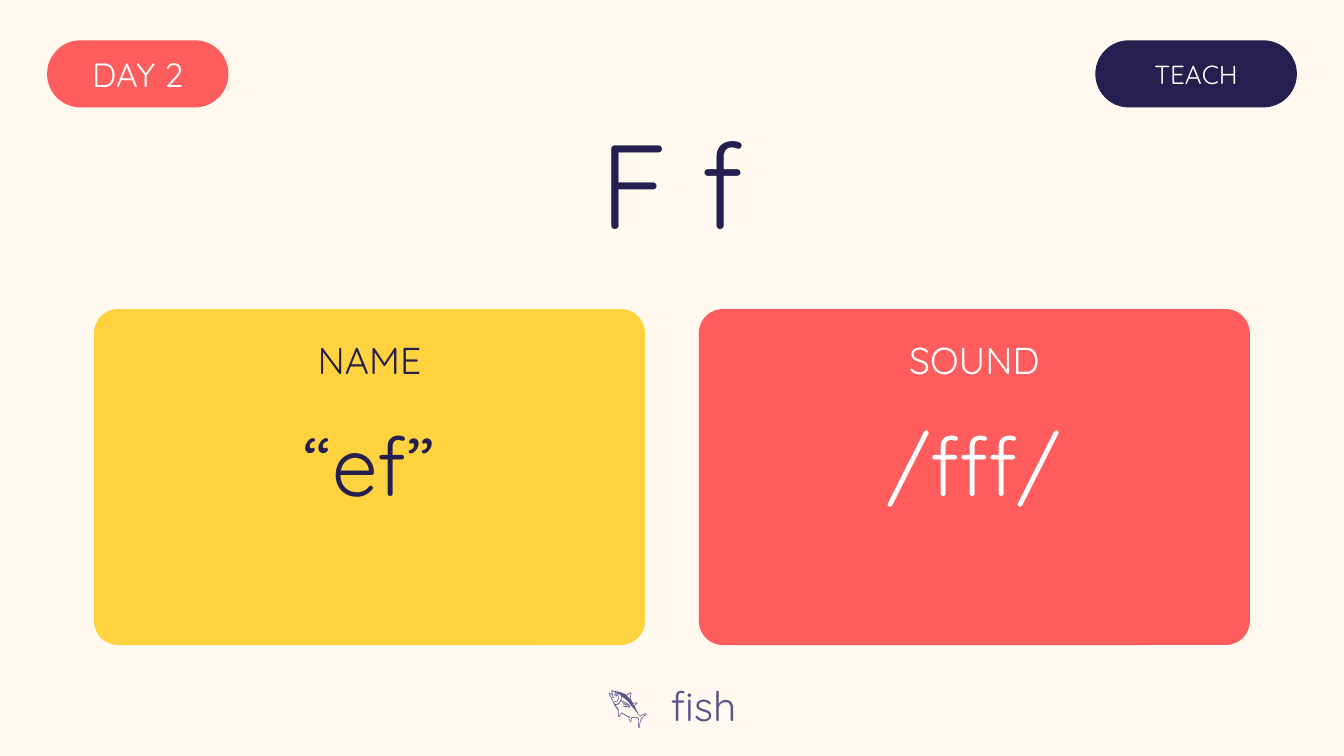
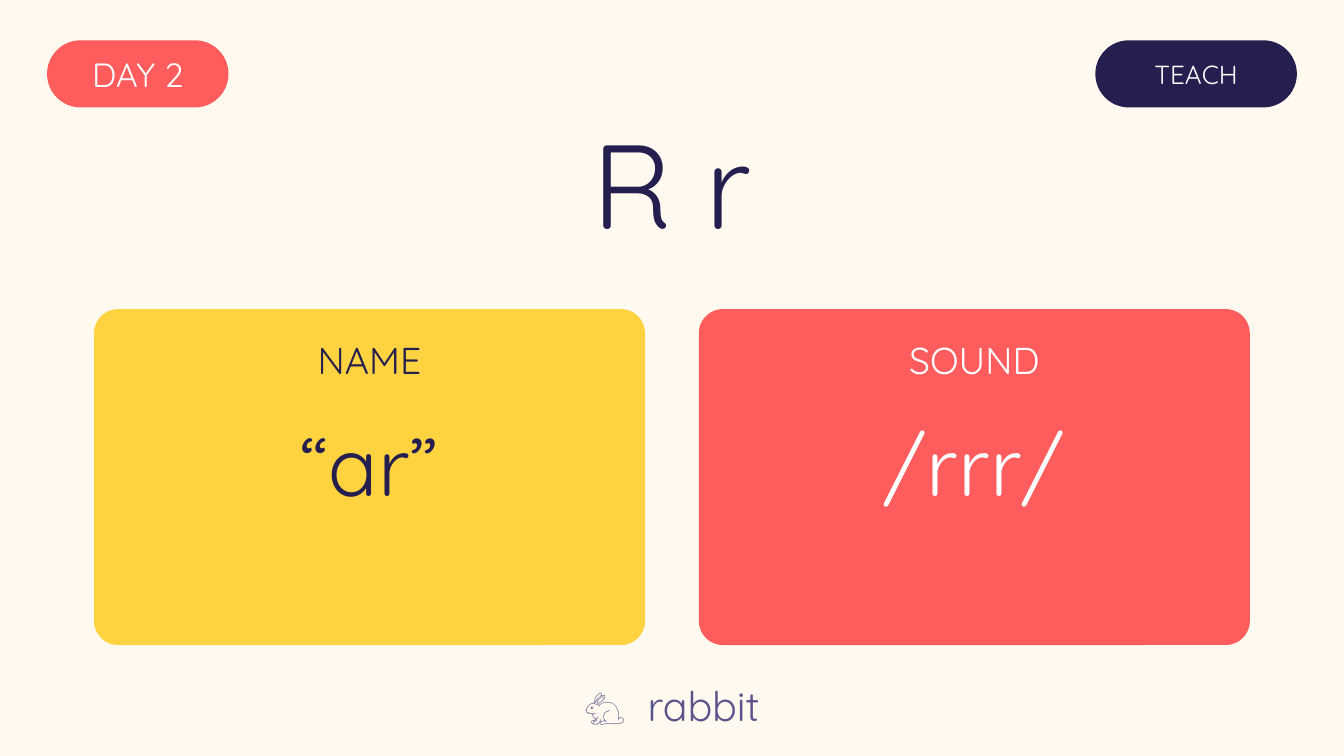
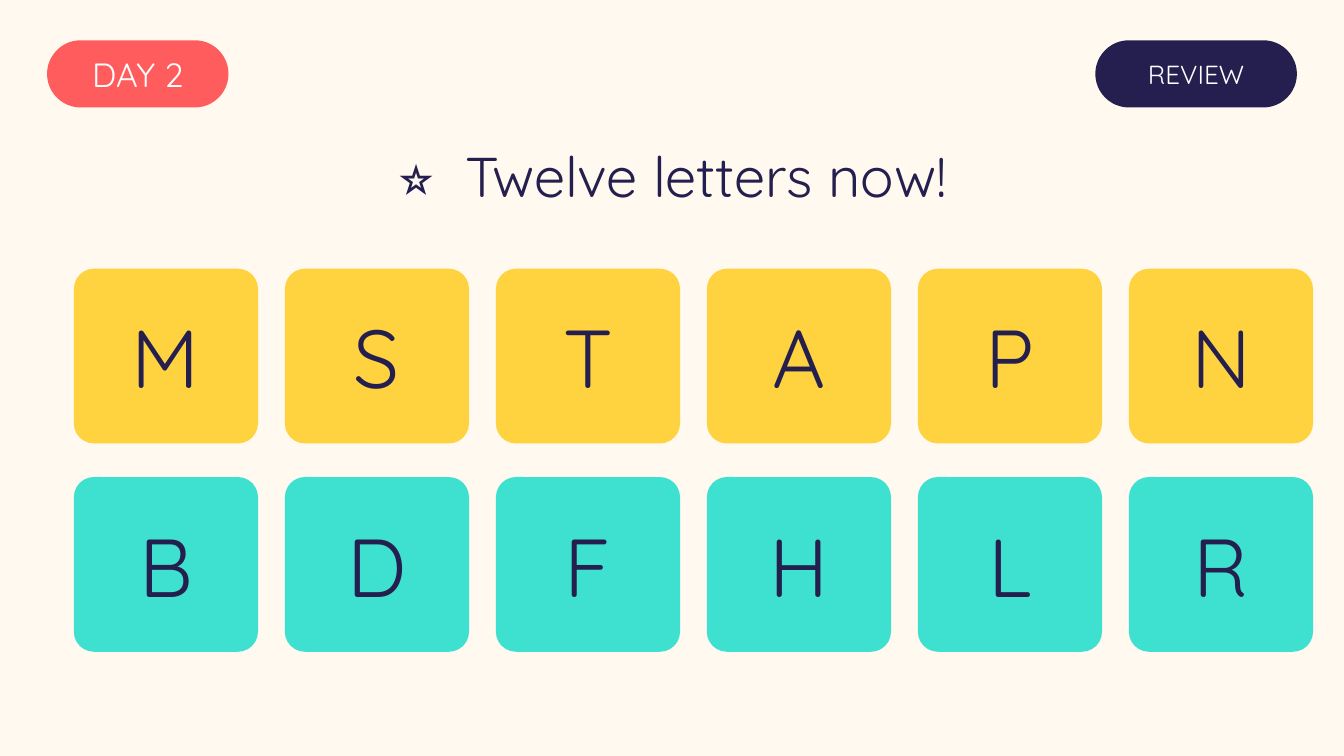
from pptx import Presentation
from pptx.dml.color import RGBColor
from pptx.enum.shapes import MSO_SHAPE
from pptx.enum.text import MSO_ANCHOR, MSO_AUTO_SIZE, PP_ALIGN
from pptx.util import Pt

ROUNDED = MSO_SHAPE.ROUNDED_RECTANGLE
MIDDLE = MSO_ANCHOR.MIDDLE
CENTER = PP_ALIGN.CENTER
NO_AUTOFIT = MSO_AUTO_SIZE.NONE

# Content
DAY = "DAY 2"
LESSONS = [
    {"title": "F f", "name": "“ef”", "sound": "/fff/", "word": "🐟  fish"},
    {"title": "R r", "name": "“ar”", "sound": "/rrr/", "word": "🐇  rabbit"},
]
REVIEW_TITLE = "⭐  Twelve letters now!"

# Shared style
FONT = "Quicksand"
CREAM, WHITE, NAVY, MUTED = "FFF9EF", "FFFFFF", "241F4E", "5A548A"
CORAL, YELLOW, TEAL = "FF5D5D", "FFD23F", "3EE0CF"
LETTER_ROWS = [("MSTAPN", YELLOW), ("BDFHLR", TEAL)]
CARDS = [("NAME", "name", YELLOW, NAVY), ("SOUND", "sound", CORAL, WHITE)]

# Layout in points: left, top, width, height
SLIDE_WIDTH, SLIDE_HEIGHT = 720, 405
DAY_PILL = (25.2, 21.6, 97.2, 36)
STAGE_PILL = (586.8, 21.6, 108, 36)
LETTER_TITLE = (0, 61.2, SLIDE_WIDTH, 72)
REVIEW_BOX = (0, 68.4, SLIDE_WIDTH, 50.4)
WORD_BOX = (0, 360, SLIDE_WIDTH, 36)
CARD_LEFT, CARD_TOP, CARD_WIDTH, CARD_HEIGHT, CARD_GAP = 50.4, 165.6, 295.2, 180, 28.8
TILE_LEFT, TILE_TOP, TILE_WIDTH, TILE_HEIGHT = 39.6, 144, 98.64, 93.6
COLUMN_GAP, ROW_GAP = 14.4, 18


def color(hex_value):
    return RGBColor.from_string(hex_value)


def points(box):
    return [Pt(value) for value in box]


def write(shape, text, size, text_color, inset=None):
    frame = shape.text_frame
    settings = {"word_wrap": True, "auto_size": NO_AUTOFIT, "vertical_anchor": MIDDLE}
    if inset is not None:
        for side in ("left", "top", "right", "bottom"):
            settings[f"margin_{side}"] = Pt(inset)
    for name, value in settings.items():
        setattr(frame, name, value)
    paragraph = frame.paragraphs[0]
    paragraph.alignment = CENTER
    run = paragraph.add_run()
    run.text = text
    for name, value in {"name": FONT, "size": Pt(size), "bold": False}.items():
        setattr(run.font, name, value)
    run.font.color.rgb = color(text_color)


def add_text(slide, box, text, size, text_color):
    write(slide.shapes.add_textbox(*points(box)), text, size, text_color)


def add_panel(slide, box, fill, corner):
    shape = slide.shapes.add_shape(ROUNDED, *points(box))
    shape.adjustments[0] = corner
    shape.shadow.inherit = False
    shape.fill.solid()
    shape.fill.fore_color.rgb = color(fill)
    shape.line.fill.background()
    return shape


def add_lesson_slide(presentation, stage, title, title_box, title_size):
    """Add a slide with its title and the two pills on top."""
    slide = presentation.slides.add_slide(presentation.slide_layouts[5])
    heading = slide.shapes.title
    for name, value in zip(("left", "top", "width", "height"), points(title_box)):
        setattr(heading, name, value)
    write(heading, title, title_size, NAVY)
    pills = [(DAY_PILL, CORAL, DAY, 18), (STAGE_PILL, NAVY, stage, 14)]
    for box, fill, text, size in pills:
        write(add_panel(slide, box, fill, 0.5), text, size, WHITE, inset=0)
    return slide


def build_teach_slide(presentation, lesson):
    slide = add_lesson_slide(presentation, "TEACH", lesson["title"], LETTER_TITLE, 64)
    for index, (label, key, fill, text_color) in enumerate(CARDS):
        left = CARD_LEFT + index * (CARD_WIDTH + CARD_GAP)
        add_panel(slide, (left, CARD_TOP, CARD_WIDTH, CARD_HEIGHT), fill, 0.072)
        add_text(slide, (left, CARD_TOP + 10.8, CARD_WIDTH, 32.4), label, 20, text_color)
        add_text(slide, (left, CARD_TOP + 50.4, CARD_WIDTH, 64.8), lesson[key], 44, text_color)
    add_text(slide, WORD_BOX, lesson["word"], 22, MUTED)


def build_review_slide(presentation):
    slide = add_lesson_slide(presentation, "REVIEW", REVIEW_TITLE, REVIEW_BOX, 30)
    for row, (letters, fill) in enumerate(LETTER_ROWS):
        top = TILE_TOP + row * (TILE_HEIGHT + ROW_GAP)
        for column, letter in enumerate(letters):
            left = TILE_LEFT + column * (TILE_WIDTH + COLUMN_GAP)
            tile = add_panel(slide, (left, top, TILE_WIDTH, TILE_HEIGHT), fill, 0.115)
            write(tile, letter, 44, NAVY)


def main():
    presentation = Presentation()
    presentation.slide_width = Pt(SLIDE_WIDTH)
    presentation.slide_height = Pt(SLIDE_HEIGHT)
    background = presentation.slide_master.background.fill
    background.solid()
    background.fore_color.rgb = color(CREAM)
    for lesson in LESSONS:
        build_teach_slide(presentation, lesson)
    build_review_slide(presentation)
    presentation.save("out.pptx")


if __name__ == "__main__":
    main()
